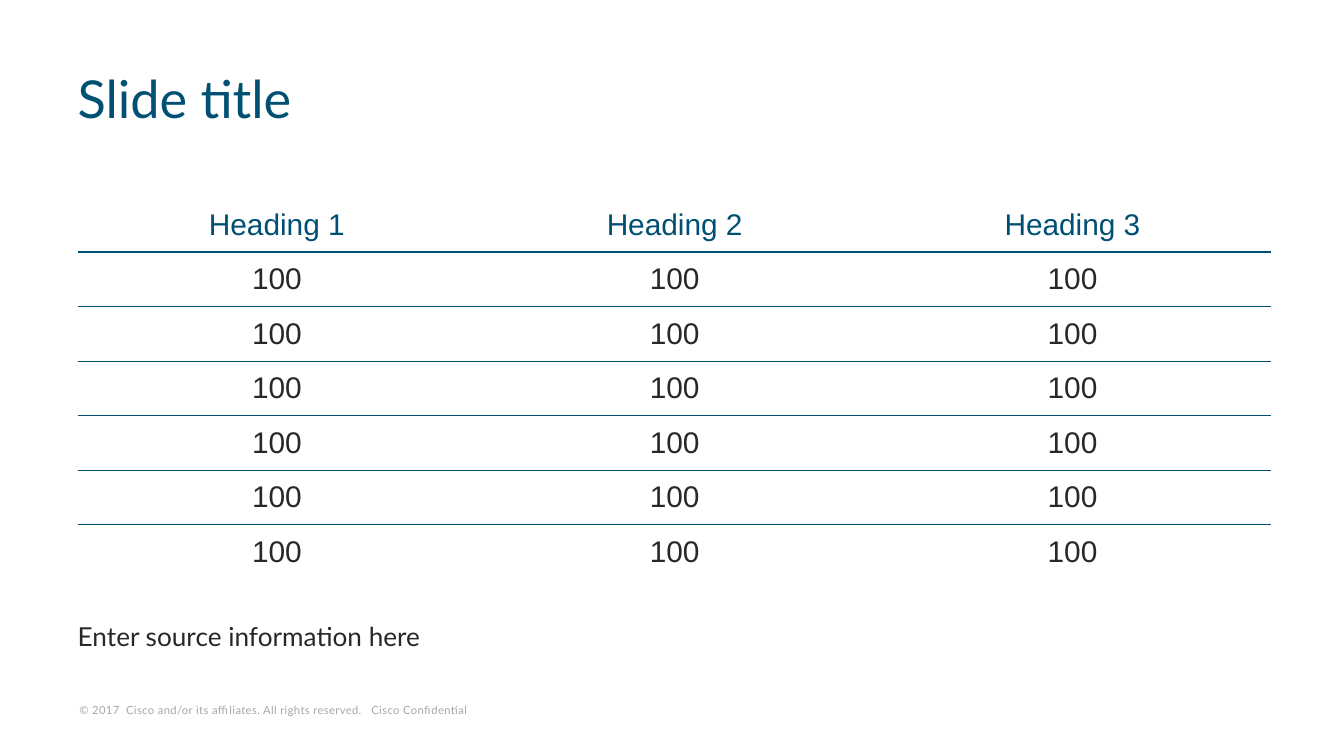
"""Build a slide with a title, a ruled table, a source line and a footer."""
import pptx
import pptx.dml.color
import pptx.enum.text
import pptx.oxml
import pptx.oxml.ns
import pptx.util

Inches = pptx.util.Inches
Pt = pptx.util.Pt
ANCHOR = pptx.enum.text.MSO_ANCHOR

COLORS = {"accent": "005073", "body": "282828", "footer": "A6A6A6"}
HEADINGS = ["Heading 1", "Heading 2", "Heading 3"]
ROWS = [HEADINGS] + [["100"] * 3 for _ in range(6)]


def add_span(para, text, font, size, color):
    span = para.add_run()
    span.text = text
    span.font.name = font
    span.font.size = Pt(size)
    span.font.bold = False
    span.font.color.rgb = pptx.dml.color.RGBColor.from_string(COLORS[color])
    return span


def add_text(page, bounds, text, size, color, anchor, insets=(0.1, 0.05)):
    box = page.shapes.add_textbox(*[Inches(length) for length in bounds])
    frame = box.text_frame
    frame.word_wrap = True
    frame.vertical_anchor = anchor
    frame.margin_left = frame.margin_right = Inches(insets[0])
    frame.margin_top = frame.margin_bottom = Inches(insets[1])
    para = frame.paragraphs[0]
    return para, add_span(para, text, "Lato", size, color)


def add_border(cell, side, width):
    if width:
        start = f'w="{Pt(width)}"'
        fill = f'<a:solidFill><a:srgbClr val="{COLORS["accent"]}"/></a:solidFill>'
    else:
        start, fill = 'w="0"', "<a:noFill/>"
    namespace = pptx.oxml.ns.nsdecls("a")
    line = pptx.oxml.parse_xml(f"<a:ln{side} {namespace} {start}>{fill}</a:ln{side}>")
    cell._tc.get_or_add_tcPr().append(line)


def fill_cell(cell, text, color, top, bottom):
    cell.vertical_anchor = ANCHOR.MIDDLE
    cell.margin_left = cell.margin_right = Inches(0.23)
    cell.margin_top = cell.margin_bottom = Inches(0.05)
    for side, width in zip("LRTB", (0, 0, top, bottom)):
        add_border(cell, side, width)
    cell.fill.background()
    para = cell.text_frame.paragraphs[0]
    para.alignment = pptx.enum.text.PP_ALIGN.CENTER
    add_span(para, text, "Arial", 16, color)


def add_grid(page):
    frame = page.shapes.add_table(
        len(ROWS), len(HEADINGS), Inches(0.58), Inches(1.47), Inches(8.88), Inches(2.84)
    )
    table = frame.table
    table.first_row = table.horz_banding = False
    rules = [0, 1.5] + [0.5] * (len(ROWS) - 2) + [0]
    for row, texts in enumerate(ROWS):
        for column, text in enumerate(texts):
            color = "body" if row else "accent"
            fill_cell(table.cell(row, column), text, color, rules[row], rules[row + 1])


def main():
    deck = pptx.Presentation()
    deck.slide_width = Inches(10)
    deck.slide_height = Inches(10 * 9 / 16)
    page = deck.slides.add_slide(deck.slide_layouts[6])
    footer = "© 2017  Cisco and/or its affiliates. All rights reserved.   Cisco Confidential"
    _, span = add_text(
        page, (0.52, 5.19, 3.72, 0.17), footer, 6, "footer", ANCHOR.BOTTOM, (0.07, 0.03)
    )
    span.font._element.set("spc", "20")
    add_grid(page)
    source = "Enter source information here"
    add_text(page, (0.48, 4.54, 7.85, 0.36), source, 14, "body", ANCHOR.BOTTOM)
    para, _ = add_text(
        page, (0.48, 0.37, 9.13, 0.8), "Slide title", 28, "accent", ANCHOR.MIDDLE
    )
    para.line_spacing = 0.8
    deck.save("out.pptx")


if __name__ == "__main__":
    main()
